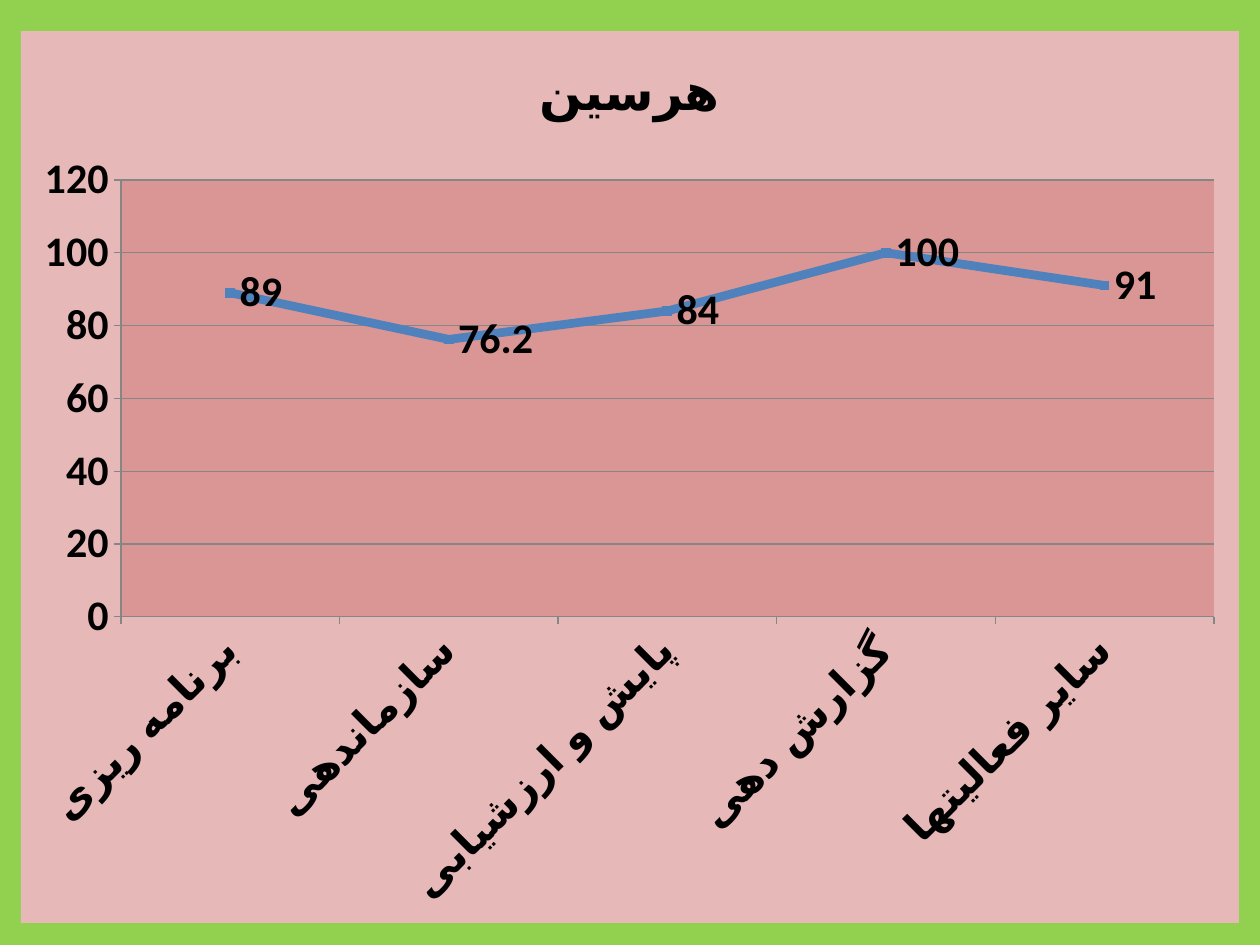
from lxml import etree
from pptx import Presentation
from pptx import util as u
from pptx.chart.data import CategoryChartData
from pptx.dml.color import RGBColor
from pptx.enum import chart as ch
from pptx.oxml import parse_xml
from pptx.oxml.ns import nsdecls, qn

PX = 9144000 // 1260
GREEN = RGBColor(0x92, 0xD0, 0x50)
PINK = RGBColor(0xE6, 0xB9, 0xB8)
ROSE = RGBColor(0xD9, 0x96, 0x94)
BLUE = RGBColor(0x4F, 0x81, 0xBD)
GRAY = RGBColor(0x86, 0x86, 0x86)
BLACK = RGBColor(0, 0, 0)

TITLE = "هرسین"
SCORES = {
    "برنامه ریزی": 89,
    "سازماندهی": 76.2,
    "پایش و ارزشیابی": 84,
    "گزارش دهی": 100,
    "سایر فعالیتها": 91,
}


def apply(item, values):
    for name, value in values.items():
        setattr(item, name, value)


def area(color):
    return parse_xml(
        f'<c:spPr {nsdecls("c", "a")}><a:solidFill><a:srgbClr val="{color}"/>'
        '</a:solidFill><a:ln><a:noFill/></a:ln></c:spPr>')


class Deck:
    face = {"name": "Calibri", "bold": True}

    def __init__(self, wide, high):
        self.show = Presentation()
        apply(self.show, {"slide_width": wide * PX, "slide_height": high * PX})

    def page(self, color):
        self.slide = self.show.slides.add_slide(self.show.slide_layouts[6])
        fill = self.slide.background.fill
        fill.solid()
        fill.fore_color.rgb = color

    def font(self, font, size):
        apply(font, {**self.face, "size": u.Pt(size)})
        font.color.rgb = BLACK

    def stroke(self, line, color, width):
        line.color.rgb = color
        line.width = u.Pt(width)

    def chart(self, box, title, scores):
        data = CategoryChartData()
        data.categories = list(scores)
        data.add_series(title, list(scores.values()))
        frame = self.slide.shapes.add_chart(
            ch.XL_CHART_TYPE.LINE_MARKERS, *(n * PX for n in box), data)
        chart = frame.chart
        apply(chart, {"has_legend": False, "has_title": True})
        self.font(chart.font, 24)
        head = chart.chart_title
        head.include_in_layout = False
        head.text_frame.text = title
        self.font(head.text_frame.paragraphs[0].runs[0].font, 28.8)
        self.axes(chart)
        self.series(chart.plots[0])
        return chart

    def axes(self, chart):
        cat, val = chart.category_axis, chart.value_axis
        for axis in (cat, val):
            apply(axis, {"major_tick_mark": ch.XL_TICK_MARK.OUTSIDE,
                         "minor_tick_mark": ch.XL_TICK_MARK.NONE})
            self.font(axis.tick_labels.font, 24)
            self.stroke(axis.format.line, GRAY, 0.75)
        cat.has_major_gridlines = False
        apply(val, {"minimum_scale": 0, "maximum_scale": 120,
                    "major_unit": 20, "has_major_gridlines": True})
        self.stroke(val.major_gridlines.format.line, GRAY, 0.75)
        body = cat._element.find(f'{qn("c:txPr")}/{qn("a:bodyPr")}')
        body.set("rot", "-2700000")
        body.set("vert", "horz")

    def series(self, plot):
        plot.vary_by_categories = False
        line = plot.series[0]
        line.smooth = False
        self.stroke(line.format.line, BLUE, 5)
        apply(line.marker, {"style": ch.XL_MARKER_STYLE.SQUARE, "size": 5})
        fill = line.marker.format.fill
        fill.solid()
        fill.fore_color.rgb = BLUE
        self.stroke(line.marker.format.line, BLUE, 0.75)
        tags = line.data_labels
        apply(tags, {"show_value": True,
                     "position": ch.XL_LABEL_POSITION.RIGHT})
        self.font(tags.font, 24)

    def paint(self, chart, back, inner, box, plot):
        root = chart._chartSpace.find(qn("c:chart"))
        root.addnext(area(back))
        field = root.find(qn("c:plotArea"))
        field.append(area(inner))
        for old in field.findall(qn("c:layout")):
            field.remove(old)
        layout = parse_xml(f'<c:layout {nsdecls("c")}><c:manualLayout/></c:layout>')
        left, top, wide, high = box
        parts = {
            "layoutTarget": "inner", "xMode": "edge", "yMode": "edge",
            "x": (plot[0] - left) / wide, "y": (plot[1] - top) / high,
            "w": plot[2] / wide, "h": plot[3] / high,
        }
        for name, value in parts.items():
            etree.SubElement(layout[0], qn(f"c:{name}")).set("val", str(value))
        field.insert(0, layout)


def main():
    deck = Deck(1260, 945)
    deck.page(GREEN)
    box = (21, 31, 1218, 892)
    chart = deck.chart(box, TITLE, SCORES)
    deck.paint(chart, PINK, ROSE, box, (121, 180, 1093, 437))
    deck.show.save("out.pptx")


if __name__ == "__main__":
    main()
